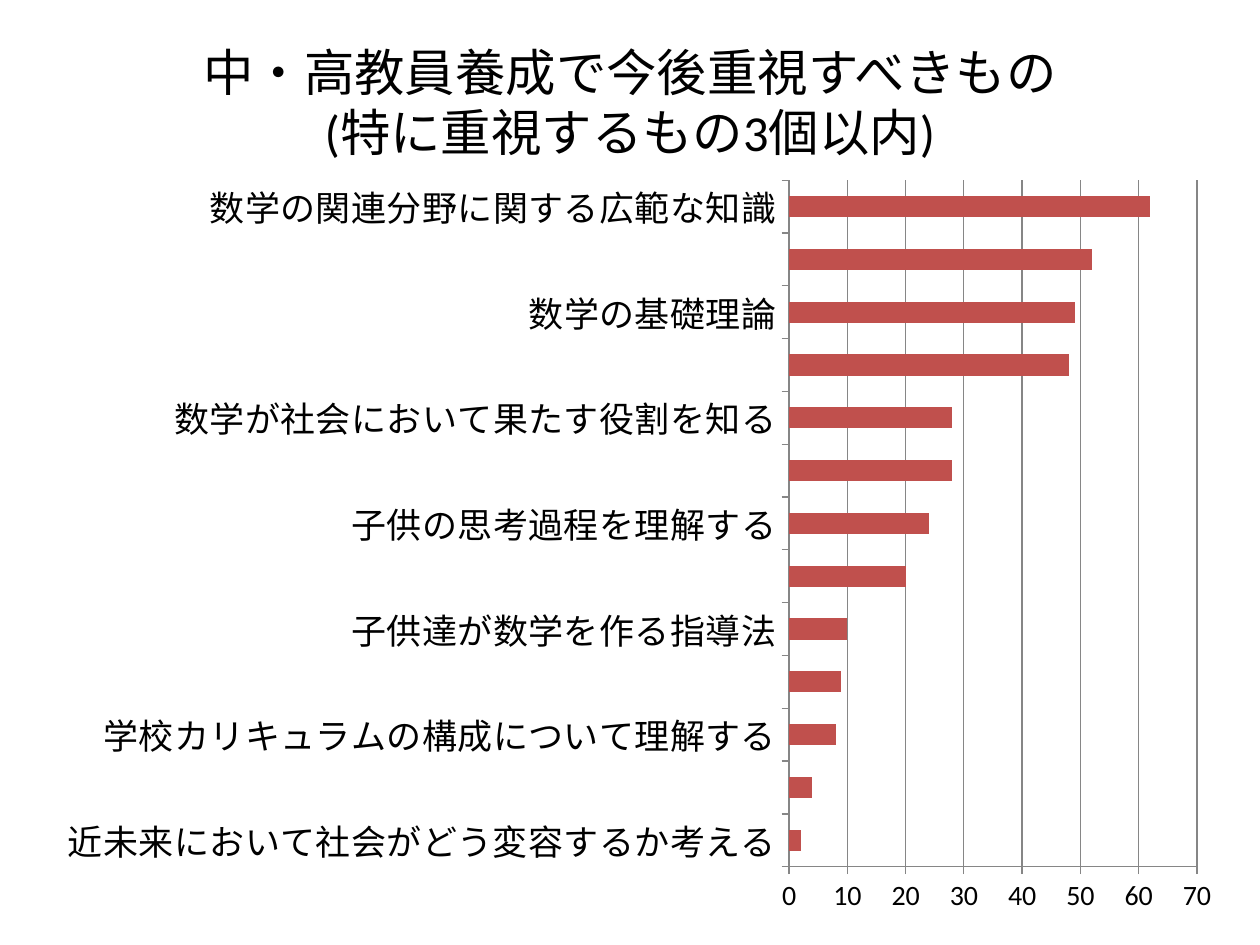
from pptx import Presentation
from pptx.chart.data import CategoryChartData
from pptx.dml.color import RGBColor
from pptx.enum.chart import XL_CHART_TYPE, XL_TICK_MARK
from pptx.enum.text import MSO_ANCHOR, PP_ALIGN
from pptx.util import Inches, Pt

BAR_CLUSTERED = XL_CHART_TYPE.BAR_CLUSTERED
TICK_OUTSIDE, TICK_NONE = XL_TICK_MARK.OUTSIDE, XL_TICK_MARK.NONE
MIDDLE = MSO_ANCHOR.MIDDLE
CENTER = PP_ALIGN.CENTER

BLACK = RGBColor(0x00, 0x00, 0x00)
RED = RGBColor(0xC0, 0x50, 0x4D)
GRAY = RGBColor(0x86, 0x86, 0x86)
FONT = "Calibri"

TITLE = "中・高教員養成で今後重視すべきもの\v(特に重視するもの3個以内)"
# From the bottom bar up; every second bar has no label.
PRIORITIES = [
    ("近未来において社会がどう変容するか考える", 2),
    ("", 4),
    ("学校カリキュラムの構成について理解する", 8),
    ("", 9),
    ("子供達が数学を作る指導法", 10),
    ("", 20),
    ("子供の思考過程を理解する", 24),
    ("", 28),
    ("数学が社会において果たす役割を知る", 28),
    ("", 48),
    ("数学の基礎理論", 49),
    ("", 52),
    ("数学の関連分野に関する広範な知識", 62),
]


def set_font(font, size):
    font.name = FONT
    font.size = Pt(size)
    font.bold = False
    font.color.rgb = BLACK


def set_line(line):
    line.color.rgb = GRAY
    line.width = Pt(0.75)


def add_title(slide, left, top, width, height):
    text_frame = slide.shapes.add_textbox(left, top, width, height).text_frame
    text_frame.word_wrap = True
    text_frame.vertical_anchor = MIDDLE
    paragraph = text_frame.paragraphs[0]
    paragraph.text = TITLE
    paragraph.alignment = CENTER
    set_font(paragraph.font, 28.8)


def add_priority_chart(slide, left, top, width, height):
    chart_data = CategoryChartData()
    chart_data.categories = [label for label, _ in PRIORITIES]
    chart_data.add_series("", [count for _, count in PRIORITIES])
    chart = slide.shapes.add_chart(
        BAR_CLUSTERED, left, top, width, height, chart_data
    ).chart
    chart.has_title = False
    chart.has_legend = False
    set_font(chart.font, 16)

    plot = chart.plots[0]
    plot.gap_width = 150
    plot.vary_by_categories = False
    fill = plot.series[0].format.fill
    fill.solid()
    fill.fore_color.rgb = RED

    for axis, size in ((chart.category_axis, 20), (chart.value_axis, 16)):
        axis.major_tick_mark = TICK_OUTSIDE
        axis.minor_tick_mark = TICK_NONE
        set_font(axis.tick_labels.font, size)
        set_line(axis.format.line)

    value_axis = chart.value_axis
    value_axis.minimum_scale = 0
    value_axis.maximum_scale = 70
    value_axis.major_unit = 10
    value_axis.has_major_gridlines = True
    set_line(value_axis.major_gridlines.format.line)


def main():
    presentation = Presentation()
    presentation.slide_width = Inches(10)
    presentation.slide_height = Inches(7.5)
    slide = presentation.slides.add_slide(presentation.slide_layouts[6])
    add_title(slide, Inches(0.5), Inches(0.3), Inches(9), Inches(1.01))
    add_priority_chart(slide, Inches(0.35), Inches(1.31), Inches(9.45), Inches(6.06))
    presentation.save("out.pptx")


if __name__ == "__main__":
    main()
